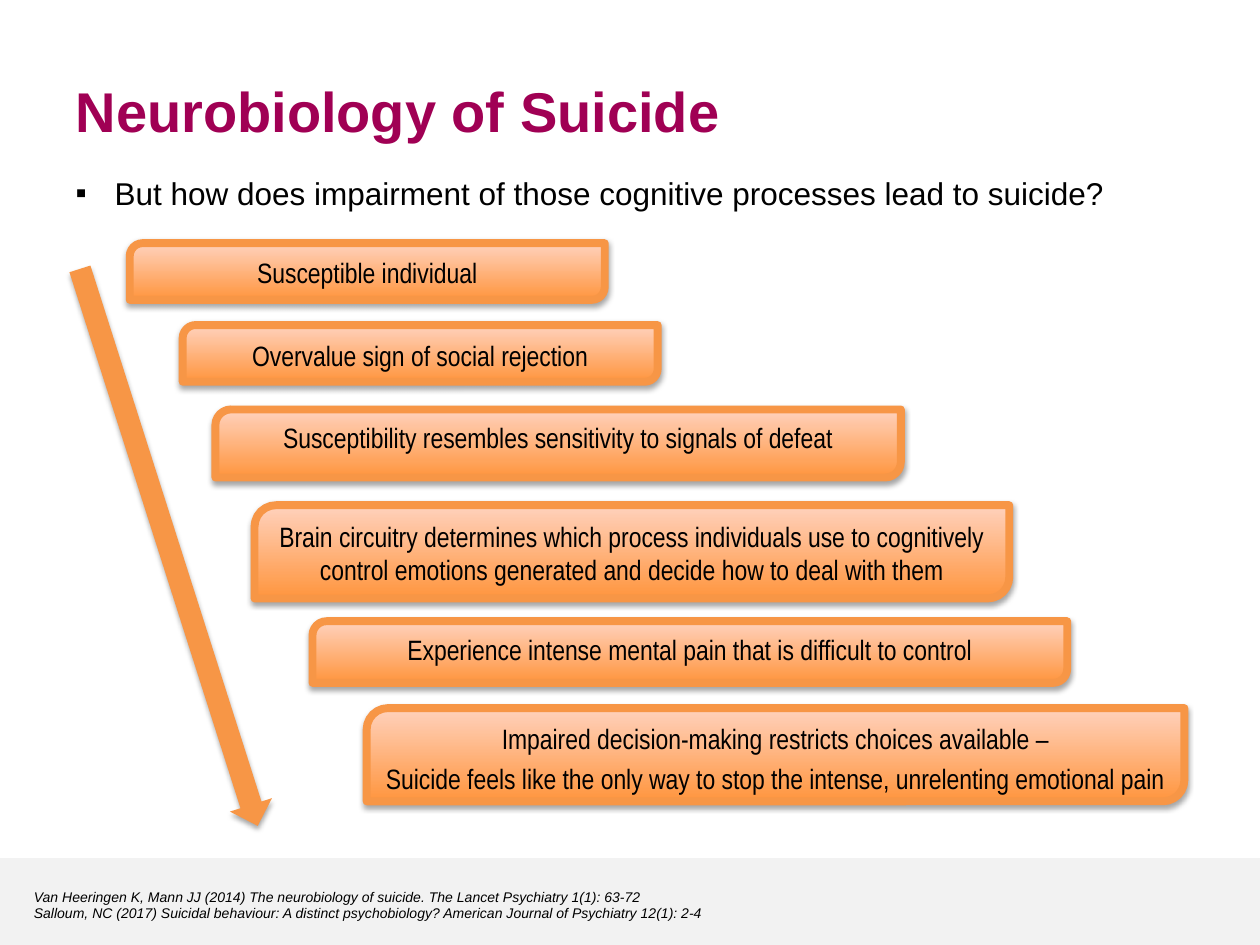
"""Build the slide on the neurobiology of suicide, with a staircase of steps."""
from dataclasses import dataclass

from lxml import etree
from pptx import Presentation
from pptx import util as u
from pptx.dml import color
from pptx.enum import shapes, text
from pptx.oxml import ns


@dataclass(frozen=True)
class Theme:
    """Colours, fonts and type sizes."""
    title: str = "A00054"
    ink: str = "000000"
    band: str = "F2F2F2"
    edge: str = "F79646"
    deep: str = "FF953E"
    pale: str = "FFD2BD"
    font: str = "Arial"
    slim: str = "Arial Narrow"
    head: int = 32
    body: int = 18
    step: int = 16
    note: int = 8


@dataclass(frozen=True)
class Step:
    """One box of the staircase, with its label lines."""
    left: float
    top: float
    width: float
    height: float
    inset: float
    high: float
    lines: tuple[str, ...]


THEME = Theme()
STEPS = (
    Step(1.03, 1.93, 3.77, 0.45, 0.05, 0.29, ("Susceptible individual",)),
    Step(1.45, 2.58, 3.77, 0.45, 0.06, 0.29, ("Overvalue sign of social rejection",)),
    Step(1.71, 3.25, 5.44, 0.54, 0.04, 0.21,
         ("Susceptibility resembles sensitivity to signals of defeat",)),
    Step(2.02, 4.01, 5.99, 0.74, 0.06, 0.29,
         ("Brain circuitry determines which process individuals use to cognitively "
          "control emotions generated and decide how to deal with them",)),
    Step(2.48, 4.93, 5.99, 0.49, 0.04, 0.19,
         ("Experience intense mental pain that is difficult to control",)),
    Step(2.91, 5.62, 6.49, 0.74, 0.06, 0.29,
         ("Impaired decision-making restricts choices available –",
          "Suicide feels like the only way to stop the intense, unrelenting emotional pain")),
)
NOTES = (
    "Van Heeringen K, Mann JJ (2014) The neurobiology of suicide. The Lancet Psychiatry 1(1): 63-72",
    "Salloum, NC (2017) Suicidal behaviour: A distinct psychobiology? "
    "American Journal of Psychiatry 12(1): 2-4",
)


def apply(item, values: dict) -> None:
    """Set each named value as an attribute."""
    for name, value in values.items():
        setattr(item, name, value)


def place(item, left: float, top: float, width: float, height: float) -> None:
    """Move and size a shape in inches."""
    names = ("left", "top", "width", "height")
    apply(item, dict(zip(names, map(u.Inches, (left, top, width, height)))))


def write(item, lines: tuple[str, ...], size: int, font: str = THEME.font,
          ink: str = THEME.ink, align=text.PP_ALIGN.LEFT, gap: float = 0,
          bullet: str = "", **style) -> None:
    """Fill a shape with formatted paragraphs."""
    frame = item.text_frame
    apply(frame, {"word_wrap": True, "auto_size": text.MSO_AUTO_SIZE.NONE,
                  "vertical_anchor": text.MSO_ANCHOR.TOP})
    for i, line in enumerate(lines):
        para = frame.add_paragraph() if i else frame.paragraphs[0]
        para.text = line
        apply(para, {"alignment": align, "space_before": u.Pt(gap if i else 0)})
        if bullet:
            props = para._p.get_or_add_pPr()
            props.set("marL", str(u.Inches(0.31)))
            props.set("indent", str(u.Inches(-0.31)))
            etree.SubElement(props, ns.qn("a:buChar"), char=bullet)
        for run in para.runs:
            apply(run.font, {"name": font, "size": u.Pt(size), **style})
            run.font.color.rgb = color.RGBColor.from_string(ink)


def shade(item) -> None:
    """Give a shape a soft shadow below it."""
    item.shadow.inherit = False
    effect = item._element.spPr.find(ns.qn("a:effectLst"))
    drop = etree.SubElement(effect, ns.qn("a:outerShdw"), blurRad=str(u.Pt(3.1)),
                            dist=str(u.Pt(1.8)), dir="5400000", rotWithShape="0")
    tone = etree.SubElement(drop, ns.qn("a:srgbClr"), val=THEME.ink)
    etree.SubElement(tone, ns.qn("a:alpha"), val="35000")


def block(parent, kind, spot: tuple[float, ...], fill: str):
    """Add a plain filled shape without a line."""
    item = parent.add_shape(kind, *map(u.Inches, spot))
    item.shadow.inherit = False
    item.fill.solid()
    item.fill.fore_color.rgb = color.RGBColor.from_string(fill)
    item.line.fill.background()
    return item


def stair(parent, step: Step) -> None:
    """Draw one step as a group of box and label."""
    group = parent.add_group_shape().shapes
    box = block(group, shapes.MSO_SHAPE.ROUND_2_DIAG_RECTANGLE,
                (step.left, step.top, step.width, step.height), THEME.deep)
    box.adjustments[0], box.adjustments[1] = 0.23, 0
    box.fill.gradient()
    box.fill.gradient_angle = 90
    for stop, tone in zip(box.fill.gradient_stops, (THEME.deep, THEME.pale)):
        stop.color.rgb = color.RGBColor.from_string(tone)
    box.line.width = u.Pt(4.5)
    box.line.color.rgb = color.RGBColor.from_string(THEME.edge)
    shade(box)
    spot = (step.left, step.top + step.inset, step.width, step.high)
    label = group.add_textbox(*map(u.Inches, spot))
    write(label, step.lines, THEME.step, THEME.slim, align=text.PP_ALIGN.CENTER, gap=3.2)


def main() -> None:
    """Build and save the slide."""
    deck = Presentation()
    apply(deck, {"slide_width": u.Inches(10), "slide_height": u.Inches(7.5)})
    slide = deck.slides.add_slide(deck.slide_layouts[1])
    tree = slide.shapes
    block(tree, shapes.MSO_SHAPE.RECTANGLE, (0, 6.81, 10, 0.69), THEME.band)

    title, body = tree.title, slide.placeholders[1]
    place(title, 0.5, 0.52, 9, 0.83)
    write(title, ("Neurobiology of Suicide",), THEME.head, ink=THEME.title, bold=True)
    title.text_frame.margin_top = u.Inches(0.09)
    place(body, 0.5, 1.33, 9.2, 0.71)
    write(body, ("But how does impairment of those cognitive processes lead to suicide?",),
          THEME.body, bullet="▪")
    note = tree.add_textbox(*map(u.Inches, (0.17, 7, 8.36, 0.37)))
    write(note, NOTES, THEME.note, italic=True)

    for step in STEPS:
        stair(tree, step)
    arrow = block(tree, shapes.MSO_SHAPE.RIGHT_ARROW, (-0.98, 4.17, 4.64, 0.35), THEME.edge)
    arrow.rotation = 72.3
    shade(arrow)
    deck.save("out.pptx")


if __name__ == "__main__":
    main()
